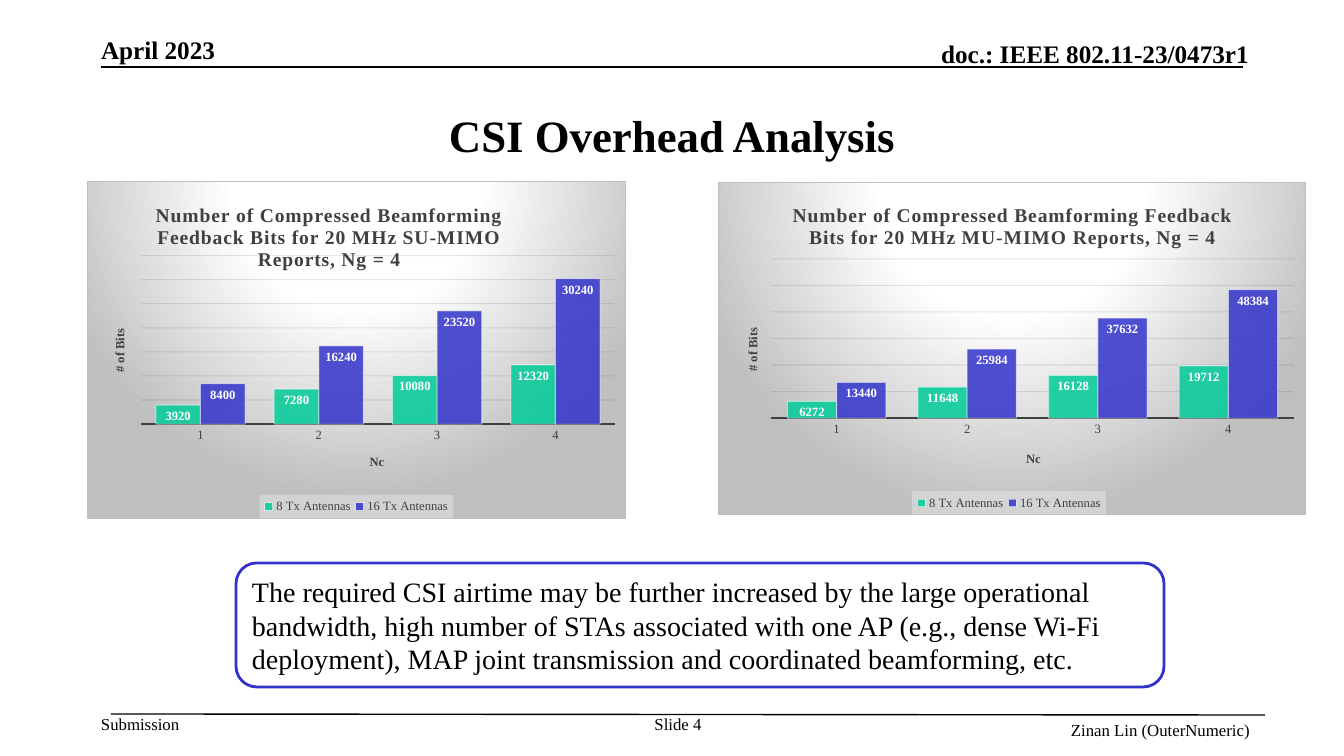
from lxml.etree import SubElement
from pptx import Presentation
from pptx.chart.data import CategoryChartData
from pptx.dml.color import RGBColor
from pptx.enum.chart import XL_CHART_TYPE, XL_LABEL_POSITION, XL_LEGEND_POSITION, XL_TICK_MARK
from pptx.enum.shapes import MSO_CONNECTOR, MSO_SHAPE
from pptx.enum.text import MSO_ANCHOR, PP_ALIGN
from pptx.oxml import parse_xml
from pptx.oxml.ns import nsdecls, qn
from pptx.util import Pt

px = 9071
hue = RGBColor.from_string
face = "Times New Roman"


def write(frame, text, size=12, bold=False, color="000000", align=PP_ALIGN.LEFT, space=0):
    para = frame.paragraphs[0]
    para.alignment = align
    run = para.add_run()
    run.text = text
    run.font.name = face
    run.font.size = Pt(size)
    run.font.bold = bold
    run.font.color.rgb = hue(color)
    if space:
        run._r.get_or_add_rPr().set("spc", str(space))


def place(part, index, **spots):
    for old in part.findall(qn("c:layout")):
        part.remove(old)
    layout = parse_xml(f"<c:layout {nsdecls('c')}><c:manualLayout/></c:layout>")
    if "h" in spots and index == 0:
        SubElement(layout[0], qn("c:layoutTarget"), val="inner")
    for key in "xy":
        SubElement(layout[0], qn(f"c:{key}Mode"), val="edge")
    for key, spot in spots.items():
        SubElement(layout[0], qn(f"c:{key}"), val=str(spot))
    part.insert(index, layout)


deck = Presentation()
deck.slide_width = 1344 * px
deck.slide_height = 756 * px
slide = deck.slides.add_slide(deck.slide_layouts[6])
shapes = slide.shapes

for ends in [(101, 67, 1243, 67), (111, 714, 1265, 715)]:
    rule = shapes.add_connector(MSO_CONNECTOR.STRAIGHT, *[end * px for end in ends])
    rule.line.color.rgb = hue("000000")
    rule.line.width = Pt(1)
    SubElement(rule._element.spPr, qn("a:effectLst"))

top, mid, low = MSO_ANCHOR.TOP, MSO_ANCHOR.MIDDLE, MSO_ANCHOR.BOTTOM
left, center, right = PP_ALIGN.LEFT, PP_ALIGN.CENTER, PP_ALIGN.RIGHT
labels = [
    ("April 2023", (101, 35, 514, 30), low, left, 18, True),
    ("doc.: IEEE 802.11-23/0473r1", (735, 39, 514, 30), low, right, 18, True),
    ("CSI Overhead Analysis", (101, 76, 1142, 117), mid, center, 32, True),
    ("Submission", (101, 714, 80, 20), top, left, 12, False),
    ("Slide 4", (639, 714, 78, 40), top, center, 12, False),
    ("Zinan Lin (OuterNumeric)", (1053, 720, 197, 20), top, right, 12, False),
]
for text, spot, anchor, align, size, bold in labels:
    frame = shapes.add_textbox(*[side * px for side in spot]).text_frame
    frame.word_wrap = True
    frame.vertical_anchor = anchor
    frame.margin_left = frame.margin_right = frame.margin_top = frame.margin_bottom = 0
    write(frame, text, size=size, bold=bold, align=align)

note = shapes.add_shape(MSO_SHAPE.ROUNDED_RECTANGLE, 236 * px, 563 * px, 928 * px, 124 * px)
note.shadow.inherit = False
note.fill.solid()
note.fill.fore_color.rgb = hue("FFFFFF")
note.line.color.rgb = hue("3333CC")
note.line.width = Pt(2)
note.text_frame.word_wrap = True
note.text_frame.vertical_anchor = mid
write(
    note.text_frame,
    "The required CSI airtime may be further increased by the large operational bandwidth, "
    "high number of STAs associated with one AP (e.g., dense Wi-Fi deployment), "
    "MAP joint transmission and coordinated beamforming, etc.",
    size=20,
)

charts = [
    ("SU", (87, 181, 539, 338), 35000, 5000,
     [3920, 7280, 10080, 12320], [8400, 16240, 23520, 30240],
     dict(x=0.1, y=0.22, w=0.88, h=0.5), dict(x=0.32, y=0.93, w=0.36, h=0.07)),
    ("MU", (718, 182, 588, 333), 60000, 10000,
     [6272, 11648, 16128, 19712], [13440, 25984, 37632, 48384],
     dict(x=0.09, y=0.23, w=0.89, h=0.48), dict(x=0.33, y=0.93, w=0.33, h=0.07)),
]
for mode, spot, peak, step, eight, sixteen, plot_spot, key_spot in charts:
    data = CategoryChartData()
    data.categories = ["1", "2", "3", "4"]
    data.add_series("8 Tx Antennas", eight)
    data.add_series("16 Tx Antennas", sixteen)
    chart = shapes.add_chart(
        XL_CHART_TYPE.COLUMN_CLUSTERED, *[side * px for side in spot], data
    ).chart
    chart.font.name = face
    chart.font.size = Pt(10)
    root = chart._chartSpace
    root.find(qn("c:chart")).addnext(parse_xml(
        f"<c:spPr {nsdecls('c', 'a')}><a:gradFill><a:gsLst>"
        '<a:gs pos="0"><a:srgbClr val="FFFFFF"/></a:gs>'
        '<a:gs pos="39000"><a:srgbClr val="FFFFFF"/></a:gs>'
        '<a:gs pos="100000"><a:srgbClr val="BFBFBF"/></a:gs></a:gsLst>'
        '<a:path path="circle"><a:fillToRect l="50000" t="-80000" r="50000" b="180000"/></a:path>'
        '</a:gradFill><a:ln w="9525"><a:solidFill><a:srgbClr val="BFBFBF"/></a:solidFill></a:ln>'
        "</c:spPr>"
    ))

    chart.has_title = True
    title = f"Number of Compressed Beamforming Feedback Bits for 20 MHz {mode}-MIMO Reports, Ng = 4"
    write(chart.chart_title.text_frame, title, size=14, bold=True, color="404040",
          align=center, space=50)
    place(chart.chart_title._element, 1, x=0.12, y=0.05)
    place(root.find(qn("c:chart")).find(qn("c:plotArea")), 0, **plot_spot)

    base, scale = chart.category_axis, chart.value_axis
    base.major_tick_mark = XL_TICK_MARK.NONE
    base.tick_labels.font.size = Pt(9)
    base.tick_labels.font.name = face
    base.tick_labels.font.color.rgb = hue("404040")
    base.format.line.color.rgb = hue("404040")
    base.format.line.width = Pt(1.5)
    scale.minimum_scale, scale.maximum_scale, scale.major_unit = 0, peak, step
    scale.visible = False
    grid = scale.major_gridlines.format.line
    grid.color.rgb = hue("0D0D0D")
    grid.width = Pt(0.75)
    for tint in scale._element.iter(qn("a:srgbClr")):
        SubElement(tint, qn("a:alpha"), val="10000")
    for axis, name, x, y in [(base, "Nc", 0.52, 0.8), (scale, "# of Bits", 0.04, 0.43)]:
        frame = axis.axis_title.text_frame
        write(frame, name, size=9, bold=True, color="404040", align=center)
        place(axis.axis_title._element, 1, x=x, y=y)
        if axis is scale:
            frame._txBody.find(qn("a:bodyPr")).set("rot", "-5400000")

    plot = chart.plots[0]
    plot.gap_width = 65
    plot.overlap = 0
    plot.vary_by_categories = False
    for bars, color in zip(plot.series, ["00CC99", "3333CC"]):
        bars.format.fill.solid()
        bars.format.fill.fore_color.rgb = hue(color)
        bars.format.line.color.rgb = hue("FFFFFF")
        bars.format.line.width = Pt(0.75)
        tints = bars._element.find(qn("c:spPr")).iter(qn("a:srgbClr"))
        for tint, alpha in zip(tints, ["85000", "50000"]):
            SubElement(tint, qn("a:alpha"), val=alpha)
        tags = bars.data_labels
        tags.show_value = True
        tags.position = XL_LABEL_POSITION.INSIDE_END
        tags.font.name = face
        tags.font.size = Pt(9)
        tags.font.bold = True
        tags.font.color.rgb = hue("FFFFFF")

    chart.has_legend = True
    key = chart.legend
    key.position = XL_LEGEND_POSITION.BOTTOM
    key.include_in_layout = False
    key.font.name = face
    key.font.size = Pt(9)
    key.font.color.rgb = hue("404040")
    place(key._element, 1, **key_spot)
    key._element.find(qn("c:overlay")).addnext(parse_xml(
        f"<c:spPr {nsdecls('c', 'a')}><a:solidFill><a:srgbClr val=\"F2F2F2\">"
        '<a:alpha val="39000"/></a:srgbClr></a:solidFill></c:spPr>'
    ))

deck.save("out.pptx")
